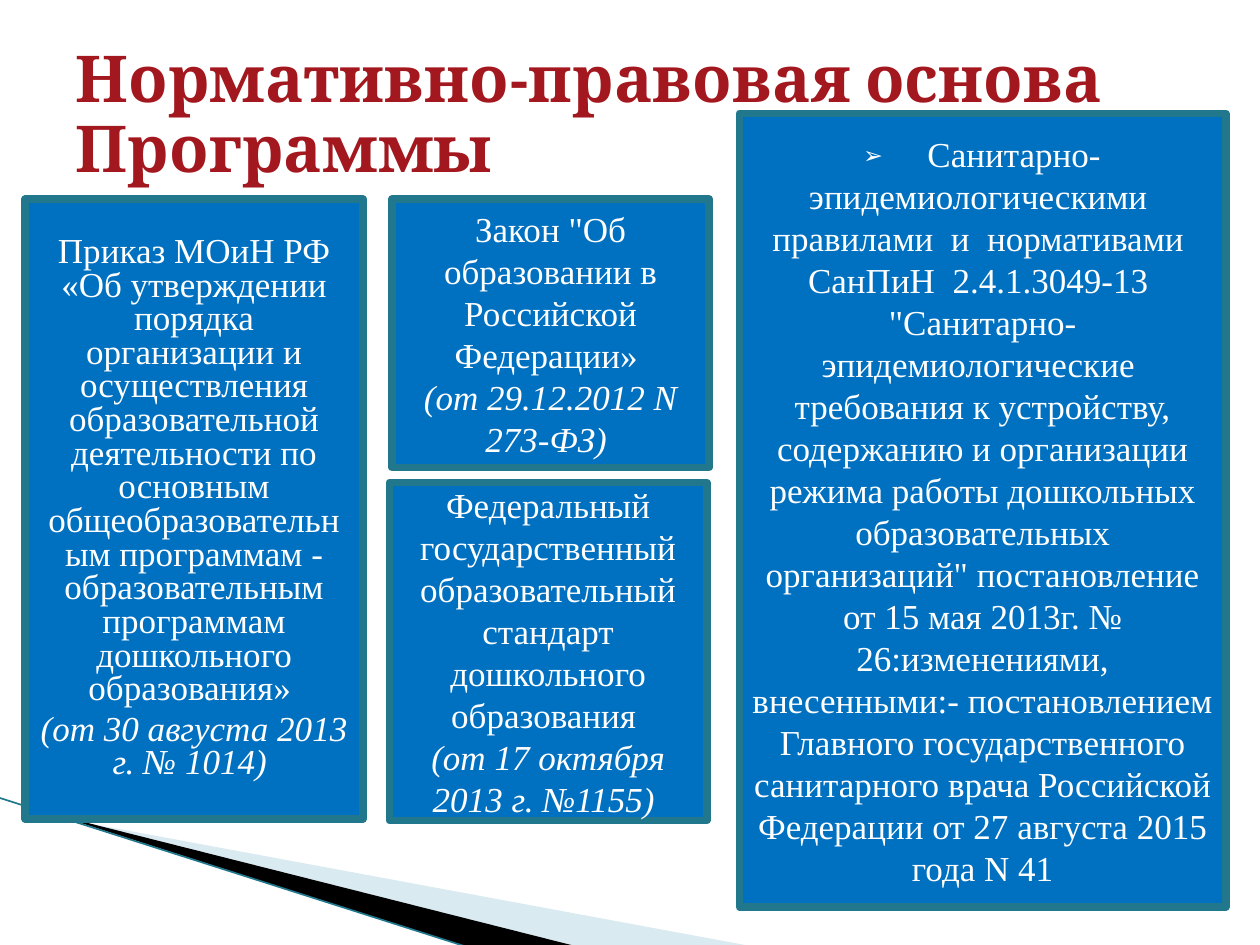
import pptx
import pptx.util
import pptx.dml.color
import pptx.enum.shapes
import pptx.enum.text
import pptx.oxml.ns
from dataclasses import dataclass
from lxml import etree
from pptx.util import Pt


@dataclass(frozen=True)
class Theme:
    title: str = "A3171E"
    box: str = "0070C0"
    border: str = "21788D"
    text: str = "FFFFFF"
    wedge: str = "A0CBDC"
    shade: str = "000000"
    title_font: str = "Cambria"
    body_font: str = "Times New Roman"
    arrow_font: str = "DejaVu Sans Mono"
    title_size: float = 36.9
    body_size: float = 20
    arrow_size: float = 18


theme = Theme()


def color(value):
    return pptx.dml.color.RGBColor.from_string(value)


presentation = pptx.Presentation()
presentation.slide_width = Pt(720)
presentation.slide_height = Pt(540)
slide = presentation.slides.add_slide(presentation.slide_layouts[5])

title = slide.shapes.title
title.left, title.top, title.width, title.height = Pt(36), Pt(21.6), Pt(648), Pt(90)
title.text_frame.text = "Нормативно-правовая основа Программы"
title.text_frame.word_wrap = True
title.text_frame.auto_size = pptx.enum.text.MSO_AUTO_SIZE.NONE
title.text_frame.vertical_anchor = pptx.enum.text.MSO_ANCHOR.MIDDLE
paragraph = title.text_frame.paragraphs[0]
paragraph.alignment = pptx.enum.text.PP_ALIGN.LEFT
paragraph.line_spacing = 0.9
paragraph.font.name = theme.title_font
paragraph.font.size = Pt(theme.title_size)
paragraph.font.bold = True
paragraph.font.color.rgb = color(theme.title)

wedges = [
    ([(39.6, 468.5), (428.4, 540.5), (328.3, 540.5), (39.6, 468)], theme.wedge, 40),
    ([(38.2, 467.3), (329, 540.7), (267.8, 541.4), (38.9, 468)], theme.shade, 100),
]
for points, fill, opacity in wedges:
    corners = [(Pt(x), Pt(y)) for x, y in points]
    builder = slide.shapes.build_freeform(*corners[0], scale=1.0)
    builder.add_line_segments(corners[1:], close=True)
    wedge = builder.convert_to_shape()
    wedge.shadow.inherit = False
    wedge.fill.solid()
    wedge.fill.fore_color.rgb = color(fill)
    wedge.line.fill.background()
    if opacity < 100:
        fill_color = wedge.fill._xPr.find(".//" + pptx.oxml.ns.qn("a:srgbClr"))
        alpha = etree.SubElement(fill_color, pptx.oxml.ns.qn("a:alpha"))
        alpha.set("val", str(opacity * 1000))

edge = slide.shapes.add_connector(
    pptx.enum.shapes.MSO_CONNECTOR.STRAIGHT, Pt(-0.7), Pt(455.8), Pt(267.8), Pt(541.4))
edge.line.color.rgb = color(theme.border)
edge.line.width = Pt(0.95)
etree.SubElement(edge._element.spPr, pptx.oxml.ns.qn("a:effectLst"))

boxes = [
    ((14.4, 113.8, 193, 354.2), 0.8, 4, [
        "Приказ МОиН РФ «Об утверждении порядка организации и осуществления "
        "образовательной деятельности по основным общеобразовательным программам - "
        "образовательным программам дошкольного образования» ",
        "(от 30 августа 2013 г. № 1014) "]),
    ((223.9, 113.8, 181.4, 153.4), 1.0, 0, [
        "Закон \"Об образовании в Российской Федерации» ",
        "(от 29.12.2012 N 273-ФЗ) "]),
    ((222.5, 275.8, 181.4, 193), 1.0, 0, [
        "Федеральный государственный образовательный стандарт дошкольного образования ",
        "(от 17 октября 2013 г. №1155) "]),
    ((422.6, 64.8, 277.9, 453.6), 1.0, 0, [
        "➢\tСанитарно-эпидемиологическими  правилами  и  нормативами  СанПиН  "
        "2.4.1.3049-13  \"Санитарно-эпидемиологические  требования к устройству, "
        "содержанию и организации режима работы дошкольных образовательных "
        "организаций\" постановление от 15 мая 2013г. № 26:изменениями, внесенными:- "
        "постановлением Главного государственного санитарного врача Российской "
        "Федерации от 27 августа 2015 года N 41"]),
]
for bounds, line_spacing, gap, texts in boxes:
    box = slide.shapes.add_shape(
        pptx.enum.shapes.MSO_SHAPE.RECTANGLE, *[Pt(length) for length in bounds])
    box.shadow.inherit = False
    box.fill.solid()
    box.fill.fore_color.rgb = color(theme.box)
    box.line.color.rgb = color(theme.border)
    box.line.width = Pt(4.33)
    frame = box.text_frame
    frame.word_wrap = True
    frame.vertical_anchor = pptx.enum.text.MSO_ANCHOR.MIDDLE
    for index, text in enumerate(texts):
        paragraph = frame.add_paragraph() if index else frame.paragraphs[0]
        paragraph.alignment = pptx.enum.text.PP_ALIGN.CENTER
        paragraph.line_spacing = line_spacing
        if index:
            paragraph.space_before = Pt(gap)
        paragraph.font.name = theme.body_font
        paragraph.font.size = Pt(theme.body_size)
        paragraph.font.color.rgb = color(theme.text)
        paragraph.font.italic = index > 0
        arrow, tab, wording = text.rpartition("\t")
        if tab:
            arrow_run = paragraph.add_run()
            arrow_run.text = arrow + tab
            arrow_run.font.name = theme.arrow_font
            arrow_run.font.size = Pt(theme.arrow_size)
        paragraph.add_run().text = wording

presentation.save("out.pptx")
